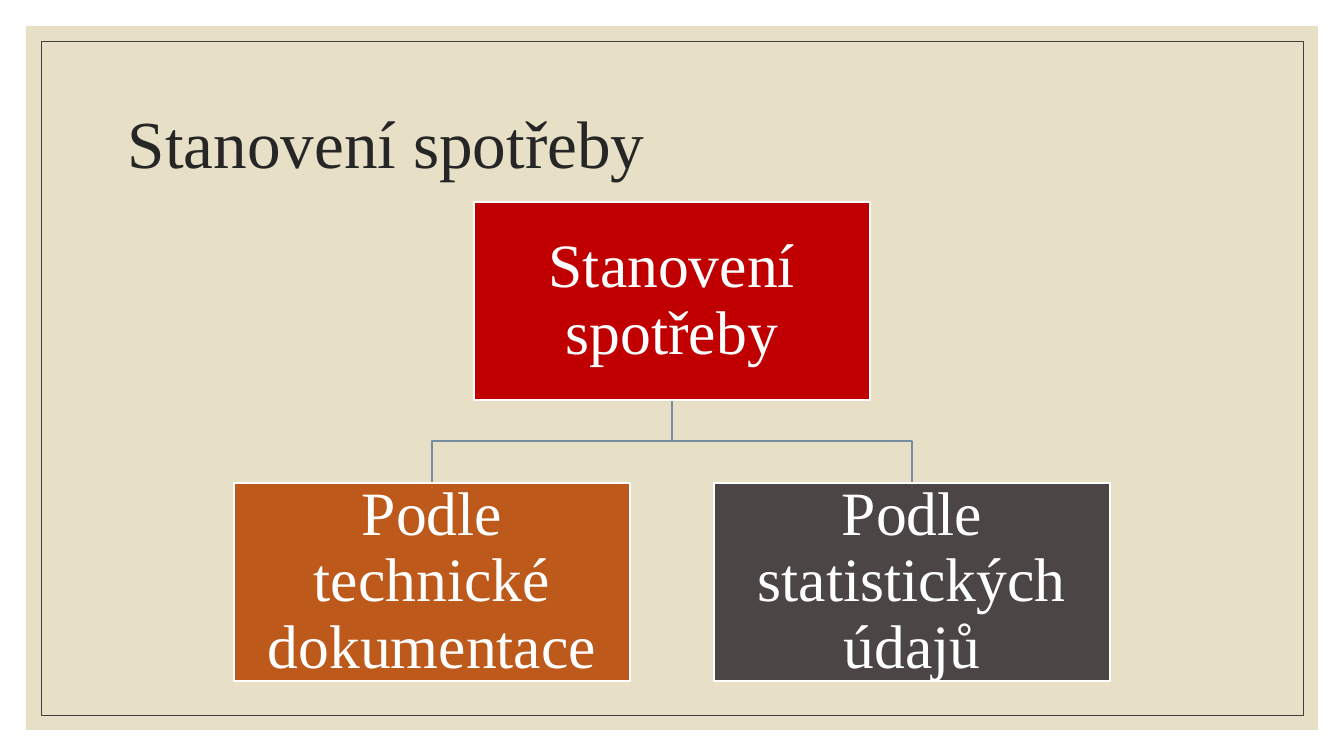
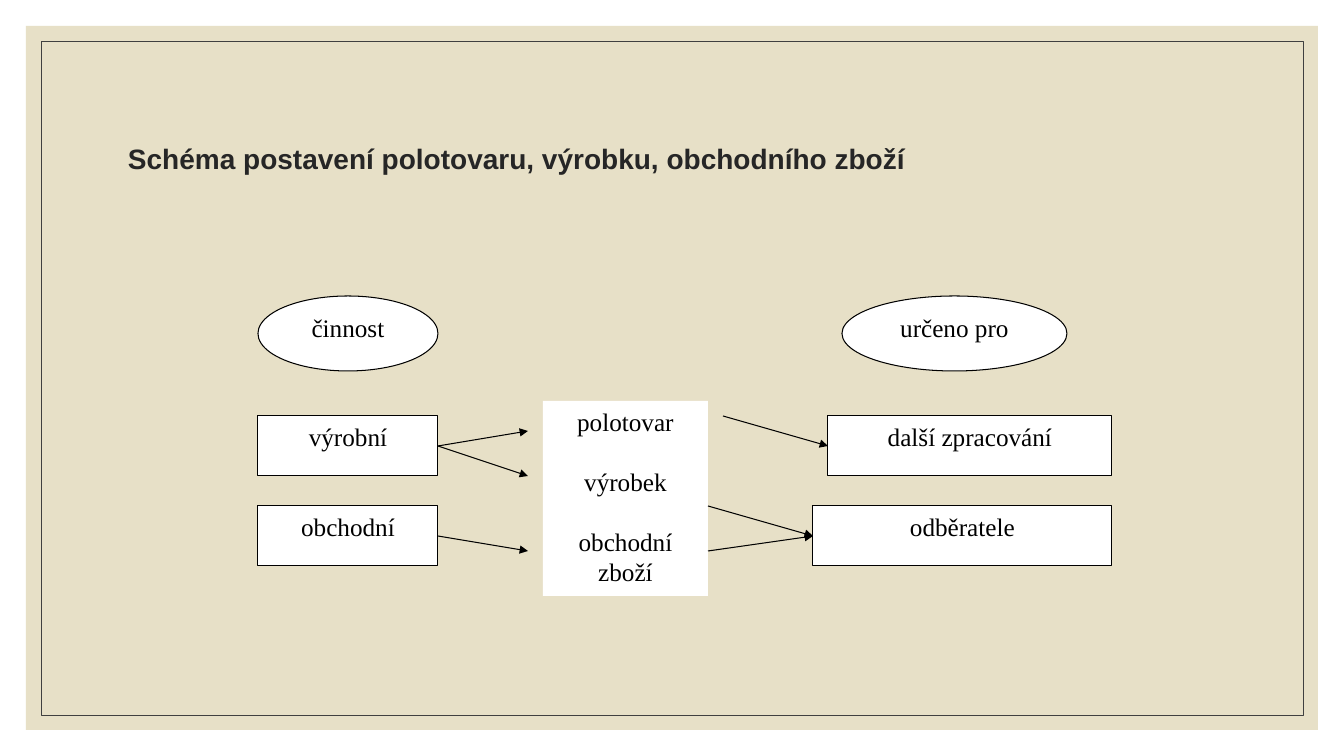
from dataclasses import dataclass

from lxml import etree
from pptx import Presentation
from pptx import util as u
from pptx.dml import color
from pptx.enum import shapes, text
from pptx.oxml import ns

EMU_PER_PX = 914400 / 100.8
WIDTH, HEIGHT = 1344, 756
COLORS = {
    "white": "FFFFFF", "black": "000000", "sand": "E7E0C7", "frame": "404040",
    "title": "262626", "branch": "758DA0", "red": "C00000", "orange": "BD591B",
    "gray": "4C4545",
}
SERIF, SANS = "Times New Roman", "Arial"
RECT, OVAL = shapes.MSO_SHAPE.RECTANGLE, shapes.MSO_SHAPE.OVAL


@dataclass(frozen=True)
class Node:
    label: str
    left: int
    top: int
    width: int
    height: int
    fill: str = "white"
    line: str | None = "black"
    shape: shapes.MSO_SHAPE = RECT


@dataclass(frozen=True)
class Arrow:
    start: tuple[int, int]
    end: tuple[int, int]


def px(length: int) -> u.Emu:
    return u.Emu(round(length * EMU_PER_PX))


def rgb(name: str) -> color.RGBColor:
    return color.RGBColor.from_string(COLORS[name])


def set_line(item, name: str | None, weight: float) -> None:
    if name is None:
        item.line.fill.background()
        return
    item.line.color.rgb = rgb(name)
    item.line.width = u.Pt(weight)


def write(box, label: str, *, size: int, ink: str, font: str = SERIF, bold: bool = False,
          align=text.PP_ALIGN.CENTER, anchor=text.MSO_ANCHOR.TOP,
          spacing: float = 1.0, inset: int | None = None) -> None:
    frame = box.text_frame
    frame.word_wrap = True
    frame.vertical_anchor = anchor
    if inset is not None:
        frame.margin_left = frame.margin_right = px(inset)
        frame.margin_top = frame.margin_bottom = px(inset)
    para = frame.paragraphs[0]
    para.alignment = align
    para.line_spacing = spacing
    span = para.add_run()
    span.text = label
    span.font.size = u.Pt(size)
    span.font.name = font
    span.font.bold = bold
    span.font.color.rgb = rgb(ink)


def add_node(page, node: Node, weight: float = 0.75):
    box = page.shapes.add_shape(node.shape, px(node.left), px(node.top),
                                px(node.width), px(node.height))
    box.shadow.inherit = False
    box.fill.solid()
    box.fill.fore_color.rgb = rgb(node.fill)
    set_line(box, node.line, weight)
    return box


def add_page(deck, title: str, *, top: int = 71, **title_format):
    """Add a slide with the sand panel, its thin frame and a title."""
    page = deck.slides.add_slide(deck.slide_layouts[6])
    for margin, line in ((26, None), (41, "frame")):
        panel = Node("", margin, margin, WIDTH - 2 * margin, HEIGHT - 2 * margin,
                     "sand", line)
        add_node(page, panel, 0.5)
    box = page.shapes.add_textbox(px(118), px(top), px(1109), px(151))
    write(box, title, ink="title", align=text.PP_ALIGN.LEFT,
          anchor=text.MSO_ANCHOR.MIDDLE, spacing=0.9, **title_format)
    return page


def add_branch(page, parent: Node, child: Node) -> None:
    """Draw a bent line from the foot of the parent to the head of the child."""
    start_x = parent.left + parent.width // 2
    start_y = parent.top + parent.height
    end_x = child.left + child.width // 2
    middle_y = (start_y + child.top) // 2
    builder = page.shapes.build_freeform(start_x, start_y, scale=EMU_PER_PX)
    builder.add_line_segments(
        [(start_x, middle_y), (end_x, middle_y), (end_x, child.top)], close=False)
    branch = builder.convert_to_shape()
    branch.shadow.inherit = False
    branch.fill.background()
    set_line(branch, "branch", 1)


def add_arrow(page, arrow: Arrow) -> None:
    line = page.shapes.add_connector(shapes.MSO_CONNECTOR.STRAIGHT,
                                     *map(px, arrow.start + arrow.end))
    set_line(line, "black", 0.75)
    outline = line.line._get_or_add_ln()
    etree.SubElement(outline, ns.qn("a:tailEnd"), type="triangle")
    etree.SubElement(line._element.spPr, ns.qn("a:effectLst"))


def build_consumption(deck) -> None:
    page = add_page(deck, "Stanovení spotřeby", size=48)
    width, height, pitch = 396, 198, 480
    left, top, child_top = (WIDTH - width) // 2, 202, 483
    root = Node("Stanovení spotřeby", left, top, width, height, "red", "white")
    children = [
        Node(label, left + side * pitch // 2, child_top, width, height, fill, "white")
        for label, side, fill in (("Podle technické dokumentace", -1, "orange"),
                                  ("Podle statistických údajů", 1, "gray"))
    ]
    for child in children:
        add_branch(page, root, child)
    for node in (root, *children):
        write(add_node(page, node, 1), node.label, size=44, ink="white",
              anchor=text.MSO_ANCHOR.MIDDLE, spacing=0.9, inset=3)


def build_scheme(deck) -> None:
    page = add_page(deck, "Schéma postavení polotovaru, výrobku, obchodního zboží",
                    top=85, size=20, font=SANS, bold=True)
    row_1, row_2, row_height = 416, 506, 60
    activity, activity_width = 258, 180
    goods, goods_top, goods_width = 543, 401, 165
    nodes = [
        Node("činnost", activity, 296, activity_width, 75, shape=OVAL),
        Node("určeno pro", 842, 296, 225, 75, shape=OVAL),
        Node("výrobní", activity, row_1, activity_width, row_height),
        Node("obchodní", activity, row_2, activity_width, row_height),
        Node("další zpracování", 828, row_1, 284, row_height),
        Node("odběratele", 813, row_2, 299, row_height),
    ]
    nodes += [
        Node(label, goods, goods_top + index * row_height, goods_width, height, line=None)
        for index, (label, height) in enumerate(
            (("polotovar", row_height), ("výrobek", row_height), ("obchodní zboží", 75)))
    ]
    for node in nodes:
        write(add_node(page, node), node.label, size=18, ink="black")

    middle_1, middle_2 = row_1 + row_height // 2, row_2 + row_height // 2
    activity_edge, goods_edge = activity + activity_width, goods + goods_width
    arrows = (
        Arrow((activity_edge, middle_1), (528, 431)),
        Arrow((activity_edge, middle_1), (528, 476)),
        Arrow((activity_edge, middle_2), (528, 551)),
        Arrow((goods_edge + 15, row_1), (828, middle_1)),
        Arrow((goods_edge, row_2), (813, middle_2)),
        Arrow((goods_edge, 551), (813, middle_2)),
    )
    for arrow in arrows:
        add_arrow(page, arrow)


def main() -> None:
    deck = Presentation()
    deck.slide_width, deck.slide_height = px(WIDTH), px(HEIGHT)
    build_consumption(deck)
    build_scheme(deck)
    deck.save("out.pptx")


if __name__ == "__main__":
    main()
